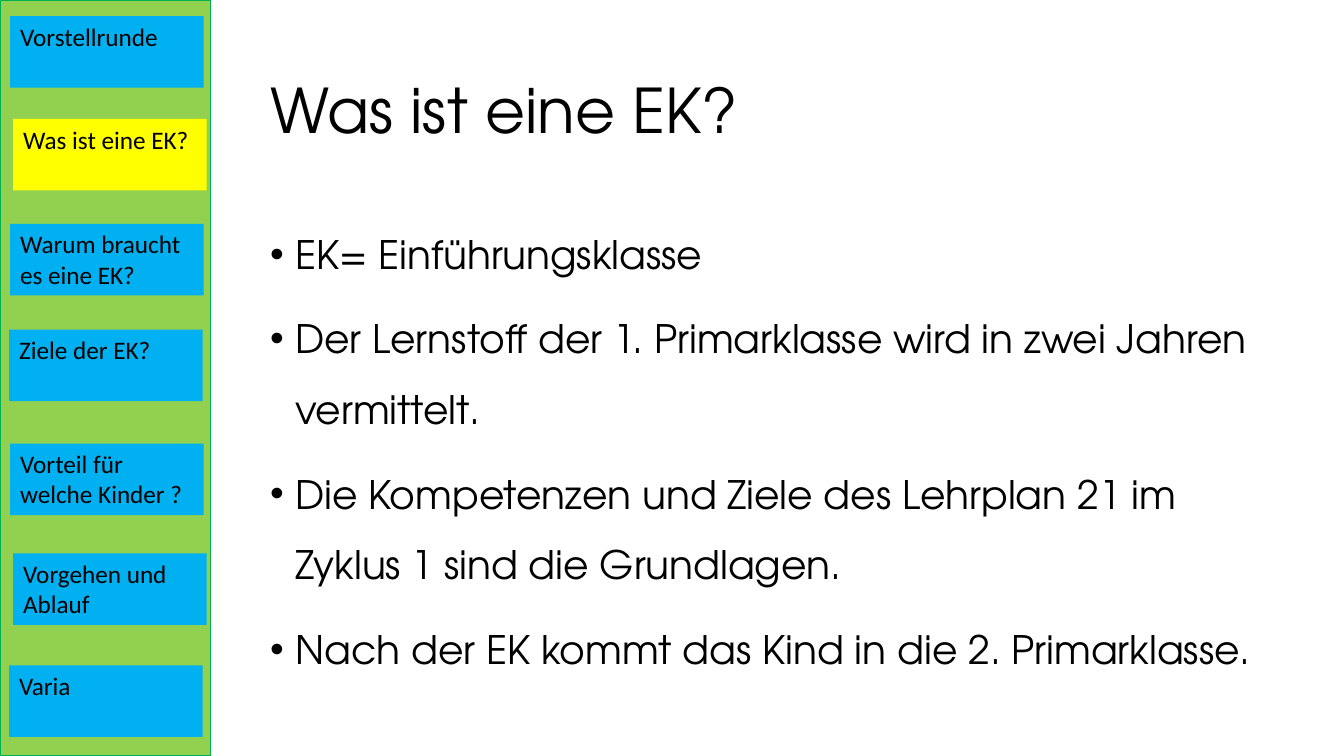
"""Builds the slide 'Was ist eine EK?' with its agenda sidebar."""
from lxml.etree import SubElement
from pptx import Presentation
from pptx.dml.color import RGBColor
from pptx.enum.shapes import MSO_SHAPE as SHAPE
from pptx.enum.text import MSO_ANCHOR as ANCHOR, PP_ALIGN as ALIGN
from pptx.oxml.ns import qn
from pptx.util import Inches, Pt

BLACK = RGBColor(0x00, 0x00, 0x00)
BLUE = RGBColor(0x00, 0xB0, 0xF0)
YELLOW = RGBColor(0xFF, 0xFF, 0x00)
LIME = RGBColor(0x92, 0xD0, 0x50)
GREEN = RGBColor(0x00, 0xB0, 0x50)
HEAD_FONT, NAV_FONT = "TeX Gyre Adventor", "Calibri"

prs = Presentation()
prs.slide_width, prs.slide_height = Inches(13.33), Inches(7.5)
s = prs.slides.add_slide(prs.slide_layouts[6])


def add_rect(left, top, width, height, fill):
    sp = s.shapes.add_shape(SHAPE.RECTANGLE, Inches(left), Inches(top), Inches(width), Inches(height))
    sp.shadow.inherit = False
    sp.fill.solid()
    sp.fill.fore_color.rgb = fill
    sp.line.fill.background()
    return sp


def add_text(p, text, size, font):
    p.alignment = ALIGN.LEFT
    r = p.add_run()
    r.text = text
    r.font.size, r.font.name = Pt(size), font
    r.font.color.rgb = BLACK


text_left = 2.58
tf = s.shapes.add_textbox(Inches(text_left), Inches(0.4), Inches(9.84), Inches(1.45)).text_frame
tf.word_wrap = True
tf.vertical_anchor = ANCHOR.MIDDLE
tf.paragraphs[0].line_spacing = 0.9
add_text(tf.paragraphs[0], "Was ist eine EK?", 44, HEAD_FONT)

points = [
    "EK= Einführungsklasse",
    "Der Lernstoff der 1. Primarklasse wird in zwei Jahren vermittelt.",
    "Die Kompetenzen und Ziele des Lehrplan 21 im Zyklus 1 sind die Grundlagen.",
    "Nach der EK kommt das Kind in die 2. Primarklasse.",
]
tf = s.shapes.add_textbox(Inches(text_left), Inches(2), Inches(10.04), Inches(4.76)).text_frame
tf.word_wrap = True
for i, point in enumerate(points):
    p = tf.add_paragraph() if i else tf.paragraphs[0]
    p.line_spacing, p.space_before = 1.5, Pt(10)
    add_text(p, point, 28, HEAD_FONT)
    pPr = p._p.get_or_add_pPr()
    pPr.set("marL", str(Inches(0.25)))
    pPr.set("indent", str(-Inches(0.25)))
    SubElement(pPr, qn("a:buFont")).set("typeface", "Arial")
    SubElement(pPr, qn("a:buChar")).set("char", "•")

sidebar = add_rect(0, 0, 2.09, 7.5, LIME)
sidebar.line.color.rgb = GREEN
sidebar.line.width = Pt(1)

agenda = [
    (0.10, 0.16, "Vorstellrunde"),
    (0.13, 1.18, "Was ist eine EK?"),
    (0.10, 2.22, "Warum braucht es eine EK?"),
    (0.09, 3.27, "Ziele der EK?"),
    (0.10, 4.40, "Vorteil für welche Kinder ?"),
    (0.13, 5.49, "Vorgehen und Ablauf"),
    (0.09, 6.60, "Varia"),
]
current = 1
for i, (left, top, label) in enumerate(agenda):
    sp = add_rect(left, top, 1.92, 0.71, YELLOW if i == current else BLUE)
    tf = sp.text_frame
    tf.word_wrap = True
    tf.vertical_anchor = ANCHOR.TOP
    add_text(tf.paragraphs[0], label, 18, NAV_FONT)

prs.save("out.pptx")
